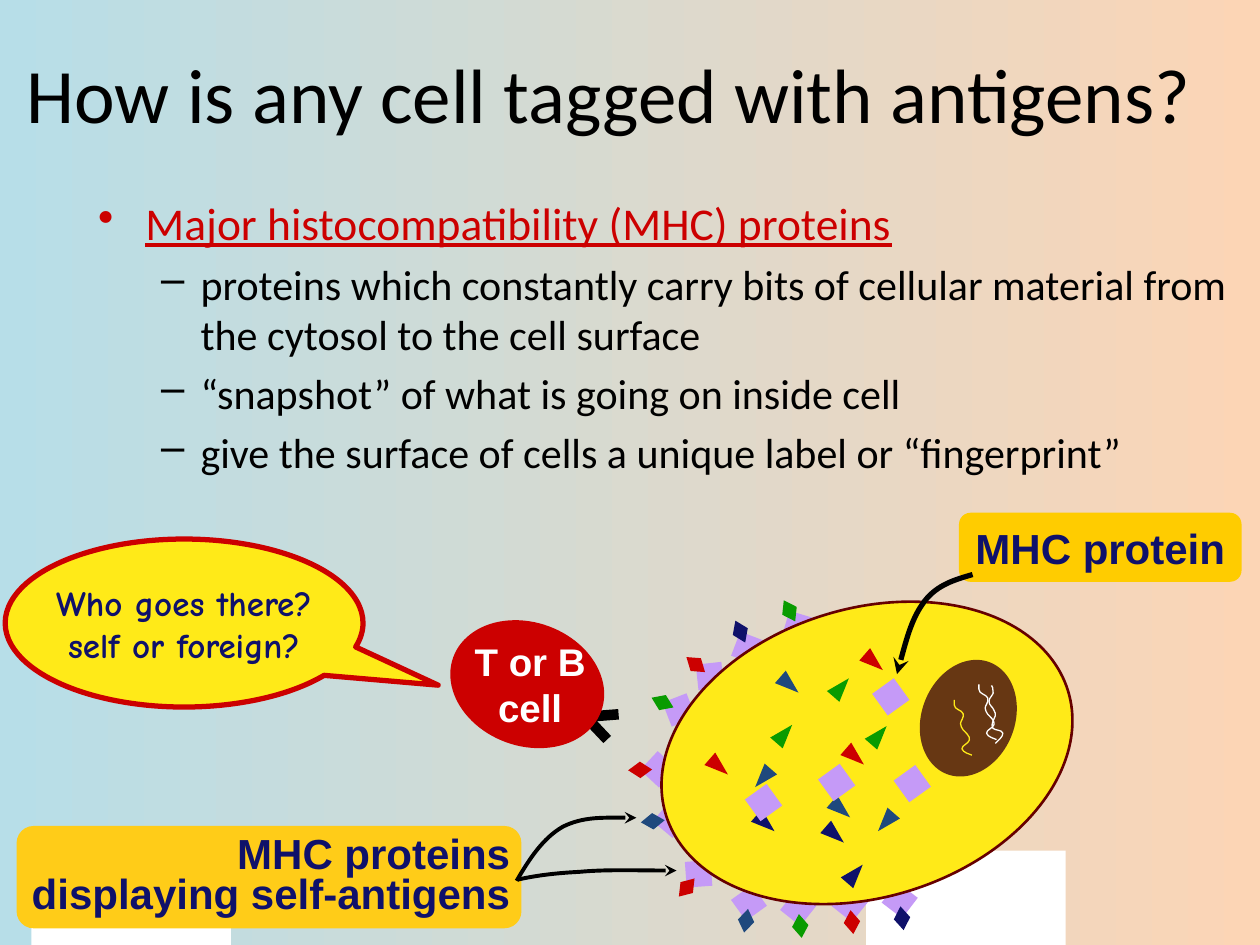
from math import cos, radians, sin

from lxml.etree import SubElement
from pptx import Presentation
from pptx.dml.color import RGBColor
from pptx.enum.shapes import MSO_SHAPE
from pptx.enum.text import MSO_ANCHOR, PP_ALIGN
from pptx.oxml.ns import qn
from pptx.util import Pt

BLACK = RGBColor(0x00, 0x00, 0x00)
WHITE = RGBColor(0xFF, 0xFF, 0xFF)
RED = RGBColor(0xCC, 0x00, 0x00)
GREEN = RGBColor(0x09, 0x9B, 0x00)
NAVY = RGBColor(0x0F, 0x11, 0x6A)
BLUE = RGBColor(0x1F, 0x49, 0x7D)
PURPLE = RGBColor(0xC5, 0x9A, 0xF7)
YELLOW = RGBColor(0xFF, 0xEA, 0x18)
MAROON = RGBColor(0x66, 0x00, 0x00)
BROWN = RGBColor(0x67, 0x37, 0x13)
GOLD = RGBColor(0xFF, 0xCC, 0x00)
AMBER = RGBColor(0xFF, 0xCC, 0x18)
SKY = RGBColor(0xB7, 0xDE, 0xE8)
PEACH = RGBColor(0xFC, 0xD5, 0xB5)

TITLE = "How is any cell tagged with antigens?"
# Bullet, text, size, colour, left margin, hanging indent, space before
BODY = [
    ("•", "Major histocompatibility (MHC) proteins", 26, RED, 27, 27, 0),
    *[("–", text, 24, BLACK, 58.5, 22.5, 4.8) for text in (
        "proteins which constantly carry bits of cellular material "
        "from the cytosol to the cell surface",
        "“snapshot” of what is going on inside cell",
        "give the surface of cells a unique label or “fingerprint”")],
]

# MHC proteins on the membrane: centre, outward angle, antigen colour
DISPLAYED = [
    (485.6, 516.6, 173.4, RED), (399.2, 499.3, 220.9, RED),
    (388.1, 405.7, 293.9, GREEN), (456.1, 358.2, 331.6, GREEN),
    (376.2, 439.6, 268.2, RED), (405.7, 386.3, 308.9, RED),
    (427.3, 370.4, 335.8, NAVY), (514.1, 514.4, 172.5, NAVY),
    (456.1, 518.8, 173.4, GREEN), (383.4, 468.4, 265, BLUE),
    (428, 515.9, 189.2, BLUE),
]
ANTIGEN_SIZE = (9.4, 13.7)
ANTIGEN_REACH = 10.4

# Antigen fragments in the cytosol: centre, angle, colour
FRAGMENTS = [
    (477, 477, 130.9, NAVY), (480.6, 462.6, 130.9, BLUE),
    (480.6, 392.8, 40.9, GREEN), (488.5, 499.3, 40.9, NAVY),
    (437.4, 470.5, 130.9, NAVY), (451.1, 391.3, 130.9, BLUE),
    (506.2, 469.8, 220.9, BLUE), (502.2, 420.1, 40.9, GREEN),
    (448.2, 419.4, 40.9, GREEN), (410.8, 438.1, 130.9, RED),
    (488.5, 432.4, 130.9, RED), (499.3, 378.4, 130.9, RED),
    (436, 444.6, 220.9, BLUE),
]
FREE_PROTEINS = [(521.3, 447.8), (509, 398.2), (478.1, 447.1), (436.3, 458.6)]

# Curves: a start point, then two control points and an end point per segment
STRAND_A = [
    (568.8, 424.8), (570.2, 423.4), (573.1, 421.2), (573.1, 419),
    (572.4, 416.9), (568.8, 417.6), (567.4, 416.2), (565.9, 414),
    (568.1, 411.1), (568.8, 409), (568.8, 408.2), (568.8, 406.8),
    (568.1, 406.1), (567.4, 403.9), (565.2, 403.2), (565.2, 401),
    (564.5, 398.9), (568.8, 396.7), (567.4, 394.6), (567.4, 393.8),
    (567.4, 392.4), (566.6, 391.7)]
STRAND_B = [
    (569.5, 422.6), (568.1, 421.9), (564.5, 421.2), (563.8, 419),
    (563.8, 416.9), (567.4, 416.2), (568.1, 414), (568.8, 411.8),
    (565.2, 409), (564.5, 408.2), (563.8, 406.8), (563, 406.1),
    (563, 404.6), (563, 403.2), (565.2, 401), (564.5, 398.9),
    (563.8, 396.7), (559.4, 396.7), (559.4, 393.8), (559.4, 393.1),
    (559.4, 392.4), (559.4, 391)]
STRAND_C = [(x - 14.1, y + 8.9) for x, y in STRAND_B]
RECEPTOR = [(353.5, 408.2), (334.8, 409.7), (347, 422.6)]
PROTEIN_ARROW = [(555.8, 328.3), (545.8, 331.2), (535.7, 334.1), (528.5, 343.4),
                 (521.3, 352.8), (517, 368.6), (512.6, 385.2)]
DISPLAY_ARROWS = [
    [(295.2, 503.3), (302.4, 491), (310.3, 478.8), (321.8, 472.3),
     (333.4, 466.6), (348.5, 467.3), (363.6, 467.3)],
    [(295.9, 502.6), (306, 500.4), (316.1, 499), (331.2, 498.2),
     (346.3, 496.8), (366.5, 497.5), (386.6, 497.5)],
]

prs = Presentation()
prs.slide_width, prs.slide_height = Pt(720), Pt(540)
slide = prs.slides.add_slide(prs.slide_layouts[6])


def add_part(kind, left, top, width, height, fill, line=None, line_width=0):
    part = slide.shapes.add_shape(kind, Pt(left), Pt(top), Pt(width), Pt(height))
    part.shadow.inherit = False
    part.fill.solid()
    part.fill.fore_color.rgb = fill
    if line is None:
        part.line.fill.background()
    else:
        part.line.color.rgb = line
        part.line.width = Pt(line_width)
    return part


def add_centred(kind, x, y, width, height, angle, fill, line=None, line_width=0):
    part = add_part(kind, x - width / 2, y - height / 2, width, height,
                    fill, line, line_width)
    part.rotation = angle


def add_path(points, color, width, curved=True, arrow=False):
    (x, y), *rest = [(Pt(px), Pt(py)) for px, py in points]
    builder = slide.shapes.build_freeform(x, y)
    builder.add_line_segments(rest, close=False)
    part = builder.convert_to_shape()
    part.shadow.inherit = False
    part.fill.background()
    part.line.color.rgb = color
    part.line.width = Pt(width)
    if curved:  # every three points become one Bézier segment
        outline = next(part._element.iter(qn("a:path")))
        steps = outline.findall(qn("a:lnTo"))
        for i in range(0, len(steps), 3):
            curve = SubElement(outline, qn("a:cubicBezTo"))
            for step in steps[i:i + 3]:
                curve.append(step[0])
                outline.remove(step)
    if arrow:
        SubElement(part.line._get_or_add_ln(), qn("a:tailEnd"), type="stealth")


def write(part, lines, size, font, color, bold=False, align=PP_ALIGN.CENTER,
          inset=None, wrap=True, spacing=None):
    frame = part.text_frame
    frame.word_wrap = wrap
    frame.vertical_anchor = MSO_ANCHOR.MIDDLE
    if inset is not None:
        frame.margin_left = frame.margin_right = Pt(inset)
        frame.margin_top = frame.margin_bottom = Pt(inset)
    frame.text = "\n".join(lines)
    for paragraph in frame.paragraphs:
        paragraph.alignment = align
        paragraph.line_spacing = spacing
        style(paragraph.font, size, font, color, bold)


def style(font, size, name, color, bold=False):
    font.size, font.name, font.bold = Pt(size), name, bold
    font.color.rgb = color


def add_text_box(left, top, width, height):
    return slide.shapes.add_textbox(Pt(left), Pt(top), Pt(width), Pt(height))


# Background and white patches
backdrop = slide.background.fill
backdrop.gradient()
backdrop.gradient_angle = 0
for stop, color in zip(backdrop.gradient_stops, (SKY, PEACH)):
    stop.color.rgb = color
for left in (18, 495):
    add_part(MSO_SHAPE.RECTANGLE, left, 486, 114, 54, WHITE)

# Title and bullets
write(add_text_box(8, 23, 783, 60), [TITLE], 44, "Calibri", BLACK, align=PP_ALIGN.LEFT)
body = add_text_box(49, 108, 671, 225).text_frame
body.word_wrap = True
for i, (bullet, text, size, color, margin, hang, before) in enumerate(BODY):
    paragraph = body.add_paragraph() if i else body.paragraphs[0]
    paragraph.text = text
    properties = paragraph._p.get_or_add_pPr()
    properties.set("marL", str(Pt(margin)))
    properties.set("indent", str(-Pt(hang)))
    SubElement(properties, qn("a:buChar"), char=bullet)
    paragraph.space_before = Pt(before)
    style(paragraph.font, size, "Calibri", color)
    paragraph.font.underline = i == 0

# Cell with displayed antigens
for x, y, angle, color in DISPLAYED:
    add_centred(MSO_SHAPE.DIAMOND, x, y, 20.8, 20.8, angle, PURPLE)
    add_centred(MSO_SHAPE.DIAMOND, x + ANTIGEN_REACH * sin(radians(angle)),
                y - ANTIGEN_REACH * cos(radians(angle)), *ANTIGEN_SIZE, angle, color)
add_centred(MSO_SHAPE.OVAL, 495.4, 430.2, 240.5, 164.9, 162.8, YELLOW, MAROON, 1.5)
for x, y, angle, color in FRAGMENTS:
    add_centred(MSO_SHAPE.ISOSCELES_TRIANGLE, x, y, *ANTIGEN_SIZE, angle, color)
add_centred(MSO_SHAPE.OVAL, 553.3, 410.4, 68.4, 53.3, 110.9, BROWN)
for x, y in FREE_PROTEINS:
    add_centred(MSO_SHAPE.DIAMOND, x, y, 21.6, 21.6, 189.2, PURPLE)
for strand, color in ((STRAND_A, WHITE), (STRAND_B, WHITE), (STRAND_C, YELLOW)):
    add_path(strand, color, 0.75)

# T or B cell with its receptor
add_path(RECEPTOR, BLACK, 6, curved=False)
add_centred(MSO_SHAPE.OVAL, 301.3, 391, 90, 70.6, 20, RED)
write(add_text_box(264, 361, 78, 60), ["T or B\vcell"], 22, "Arial", WHITE, True, wrap=False)

# Labels and their arrows
protein_label = add_part(MSO_SHAPE.ROUNDED_RECTANGLE, 548, 293, 161.5, 39.5, GOLD)
write(protein_label, ["MHC protein"], 24, "Arial", NAVY, True)
add_path(PROTEIN_ARROW, BLACK, 3, arrow=True)
display_label = add_part(MSO_SHAPE.ROUNDED_RECTANGLE, 9.5, 472, 288.5, 58.5, AMBER)
write(display_label, ["MHC proteins", "displaying self-antigens"], 24, "Arial", NAVY,
      True, PP_ALIGN.RIGHT, inset=3.6, spacing=0.8)
for arrow in DISPLAY_ARROWS:
    add_path(arrow, BLACK, 2.25, arrow=True)

# Speech bubble
bubble = add_part(MSO_SHAPE.OVAL_CALLOUT, 3, 308, 204.5, 96, YELLOW, RED, 3)
bubble.adjustments[0], bubble.adjustments[1] = 0.71, 0.37
write(bubble, ["Who goes there?", "self or foreign?"], 20, "Comic Neue", NAVY, True,
      inset=0, wrap=False)

prs.save("out.pptx")
